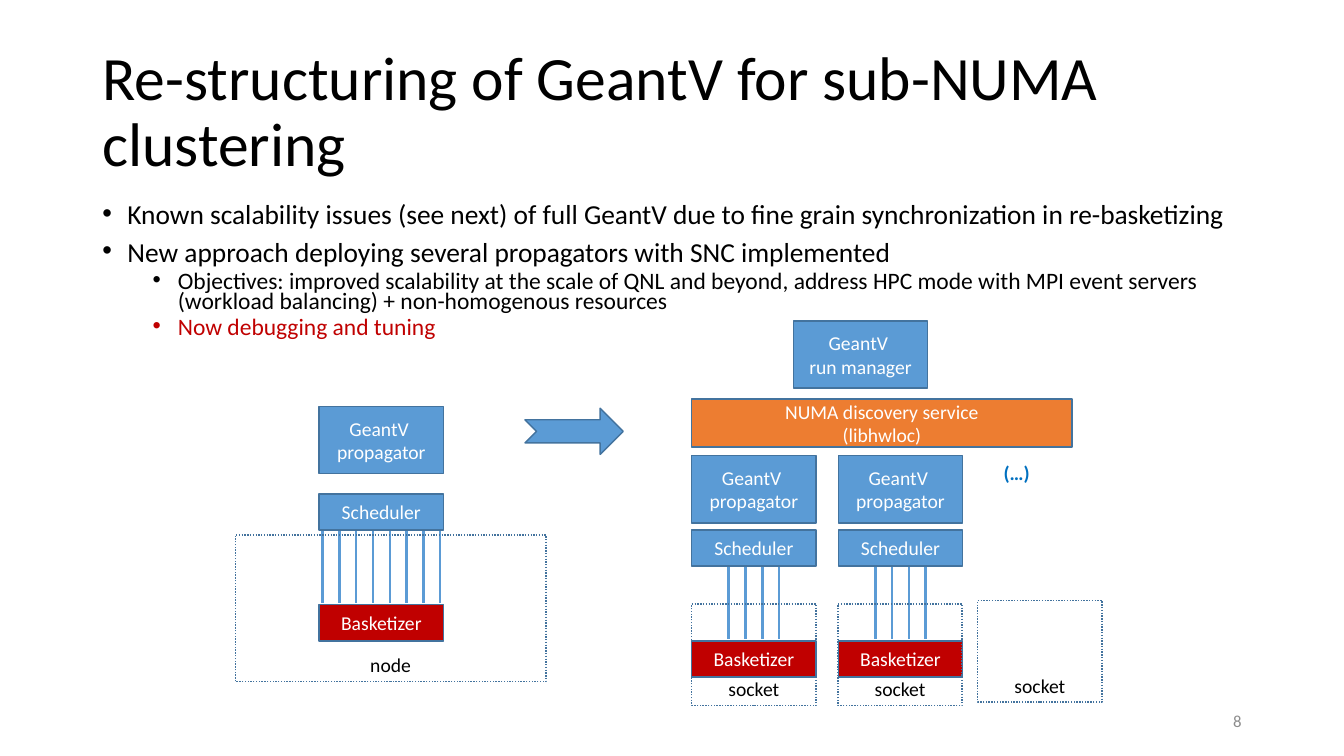
"""Builds the slide on re-structuring GeantV for sub-NUMA clustering."""
from lxml import etree
from pptx import Presentation
from pptx.dml.color import RGBColor
from pptx.enum.dml import MSO_LINE
from pptx.enum.shapes import MSO_CONNECTOR, MSO_SHAPE
from pptx.enum.text import MSO_ANCHOR, MSO_AUTO_SIZE, PP_ALIGN
from pptx.oxml.ns import qn
from pptx.util import Inches, Pt

RECT, ARROW = MSO_SHAPE.RECTANGLE, MSO_SHAPE.NOTCHED_RIGHT_ARROW
LINE, DOTS = MSO_CONNECTOR.STRAIGHT, MSO_LINE.ROUND_DOT
LEFT, MID, RIGHT = PP_ALIGN.LEFT, PP_ALIGN.CENTER, PP_ALIGN.RIGHT
TOP, CORE, BASE = MSO_ANCHOR.TOP, MSO_ANCHOR.MIDDLE, MSO_ANCHOR.BOTTOM
FIXED = MSO_AUTO_SIZE.NONE
HUES = {"blue": "5B9BD5", "edge": "43739E", "red": "C00000", "orange": "ED7D31",
        "note": "0070C0", "gray": "8C8C8C", "black": "000000", "white": "FFFFFF"}
RGB = {name: RGBColor.from_string(code) for name, code in HUES.items()}

deck = Presentation()
deck.slide_width, deck.slide_height = Inches(13.333), Inches(7.5)
COL, ROW = deck.slide_width / 160, deck.slide_height / 90
slide = deck.slides.add_slide(deck.slide_layouts[5])
shapes = slide.shapes


def grid(x, y, wide, high):
    return int(x * COL), int(y * ROW), int(wide * COL), int(high * ROW)


def write(shape, text, size=14, hue="white", bold=False, align=MID, anchor=CORE):
    frame = shape.text_frame
    frame.text = text
    frame.word_wrap, frame.auto_size = True, FIXED
    frame.vertical_anchor = anchor
    for para in frame.paragraphs:
        para.alignment = align
        for run in para.runs:
            font = run.font
            font.name, font.size, font.bold = "Calibri", Pt(size), bold
            font.color.rgb = RGB[hue]
    return frame


title = shapes.title
title.left, title.top, title.width, title.height = grid(11, 4.8, 138, 17.4)
head = write(title, "Re-structuring of GeantV for sub-NUMA clustering", size=44,
             hue="black", align=LEFT)
head.paragraphs[0].line_spacing = 0.9

points = [
    (0, "black", "Known scalability issues (see next) of full GeantV due to fine grain "
     "synchronization in re-basketizing"),
    (0, "black", "New approach deploying several propagators with SNC implemented"),
    (1, "black", "Objectives: improved scalability at the scale of QNL and beyond, address "
     "HPC mode with MPI event servers (workload balancing) + non-homogenous resources"),
    (1, "red", "Now debugging and tuning"),
]
body = write(shapes.add_textbox(*grid(11, 24, 136, 21)),
             "\n".join(text for _, _, text in points), hue="black", align=LEFT, anchor=TOP)
for para, (level, hue, _) in zip(body.paragraphs, points):
    para.level, para.line_spacing = level, 0.7
    para.space_before = Pt(5 if level else 10)
    font = para.runs[0].font
    font.size, font.color.rgb = Pt(16.8 if level else 19.6), RGB[hue]
    props = para._p.get_or_add_pPr()
    props.set("marL", str(Inches(0.75 if level else 0.25)))
    props.set("indent", str(-Inches(0.25)))
    etree.SubElement(props, qn("a:buFont"), typeface="Arial")
    etree.SubElement(props, qn("a:buChar"), char="•")

WIDE, TALL, LOW = 14.8, 8, 4.3
UNIT = "GeantV \npropagator"
boxes = [
    (94.5, 38.2, 15.9, TALL, "blue", "GeantV \nrun manager"),
    (82.35, 47.5, 45.3, 5.7, "orange", "NUMA discovery service\n(libhwloc)"),
    (62.5, 48.6, 11.7, 5.5, "blue", ""),
]
for x, y, top, count in [(38, 58.8, 48.4, 8), (82.35, 63.1, 54.25, 4),
                         (99.8, 63.1, 54.25, 4)]:
    boxes += [(x, top, WIDE, TALL, "blue", UNIT),
              (x, y, WIDE, LOW, "blue", "Scheduler"),
              (x, y + 13.2, WIDE, LOW, "red", "Basketizer")]
    for step in range(count):
        mark = x + WIDE / 2 + 2 * step - (count - 1)
        wire = shapes.add_connector(LINE, *grid(mark, y + LOW, mark, y + 13))
        wire.line.color.rgb, wire.line.width = RGB["blue"], Pt(1.75)
        etree.SubElement(wire._element.spPr, qn("a:effectLst"))

boxes += [
    (28, 63.7, 37, 17.45, None, "node"),
    (82.35, 71.9, WIDE, 12.1, None, "socket"),
    (99.75, 71.9, WIDE, 12.1, None, "socket"),
    (116.4, 71.5, WIDE, 12.1, None, "socket"),
]
for x, y, wide, high, hue, text in boxes:
    box = shapes.add_shape(RECT if text else ARROW, *grid(x, y, wide, high))
    box.shadow.inherit = False
    box.line.color.rgb, box.line.width = RGB["edge"], Pt(1)
    if hue:
        box.fill.solid()
        box.fill.fore_color.rgb = RGB[hue]
    else:
        box.fill.background()
        box.line.dash_style = DOTS
    if text:
        write(box, text, hue="white" if hue else "black", anchor=CORE if hue else BASE)

write(shapes.add_textbox(*grid(118.3, 54.25, 7, 4.1)), "(…)", hue="note", bold=True,
      align=LEFT, anchor=TOP)
write(shapes.add_textbox(*grid(113, 83.4, 36, 4.8)), "8", size=12, hue="gray", align=RIGHT)

deck.save("out.pptx")
